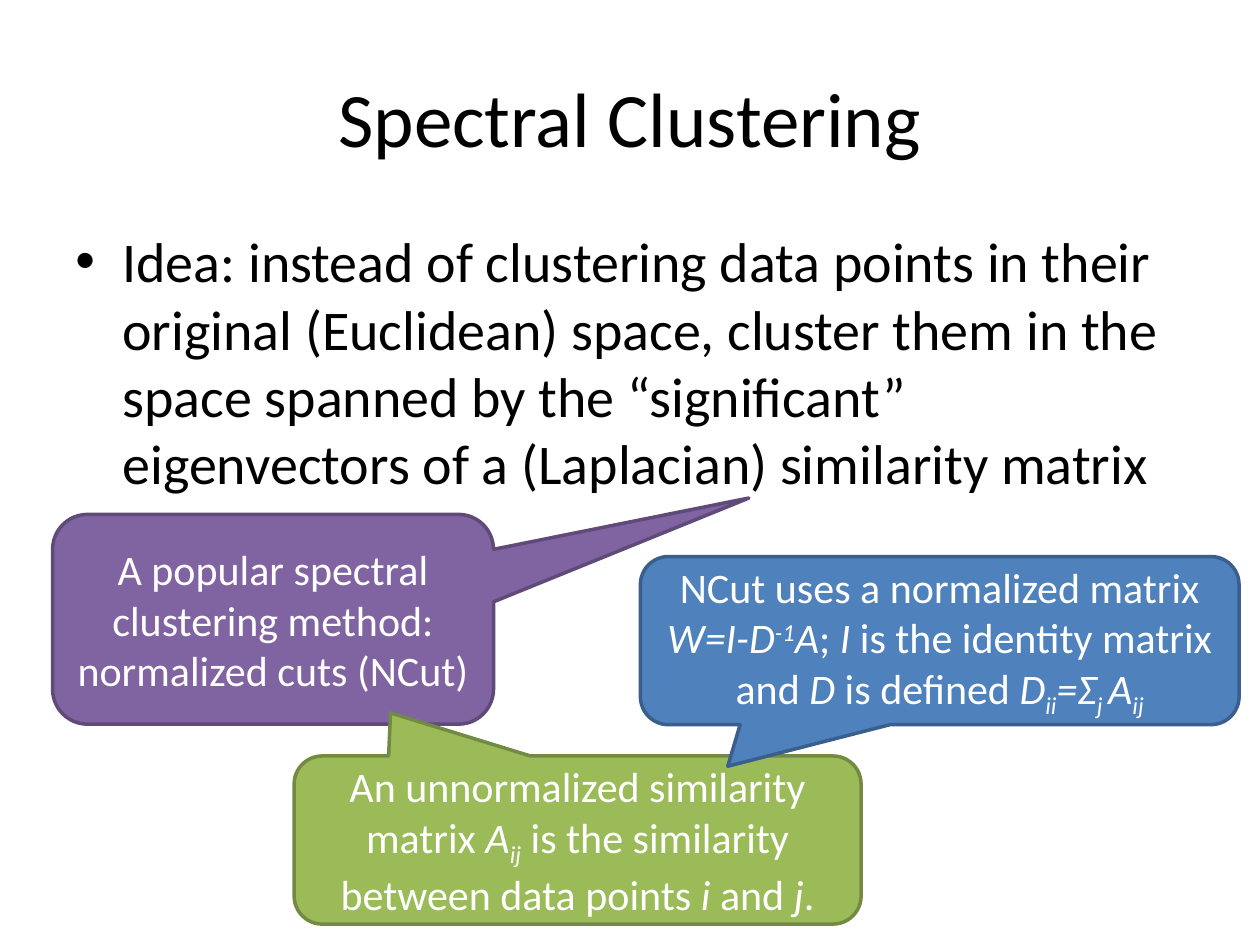
from lxml import etree
from pptx import Presentation
from pptx import util as u
from pptx.dml.color import RGBColor
from pptx.enum import shapes, text
from pptx.oxml import ns

BLACK = RGBColor(0x00, 0x00, 0x00)
WHITE = RGBColor(0xFF, 0xFF, 0xFF)
PURPLE = RGBColor(0x80, 0x64, 0xA2)
PURPLE_EDGE = RGBColor(0x5F, 0x4A, 0x78)
GREEN = RGBColor(0x9B, 0xBB, 0x59)
GREEN_EDGE = RGBColor(0x73, 0x8A, 0x42)
BLUE = RGBColor(0x4F, 0x81, 0xBD)
BLUE_EDGE = RGBColor(0x3A, 0x5F, 0x8C)

SUBSCRIPT = -25
SUPERSCRIPT = 30


def plain(content):
    return content, False, 0


def math(content, baseline=0):
    return content, True, baseline


class SlideBuilder:
    font_name = "Calibri"
    title_size = 44
    body_size = 32
    callout_size = 24
    corner = 0.167

    def __init__(self, slide):
        self.slide = slide

    def style(self, paragraph, size, color, alignment):
        paragraph.alignment = alignment
        paragraph.font.name = self.font_name
        paragraph.font.size = u.Pt(size)
        paragraph.font.color.rgb = color

    def text_box(self, box):
        frame = self.slide.shapes.add_textbox(*map(u.Cm, box)).text_frame
        frame.word_wrap = True
        return frame

    def title(self, content, box):
        frame = self.text_box(box)
        frame.vertical_anchor = text.MSO_ANCHOR.MIDDLE
        paragraph = frame.paragraphs[0]
        paragraph.text = content
        self.style(paragraph, self.title_size, BLACK, text.PP_ALIGN.CENTER)

    def bullet(self, content, box):
        paragraph = self.text_box(box).paragraphs[0]
        paragraph.text = content
        paragraph.space_before = u.Pt(0.2 * self.body_size)
        properties = paragraph._p.get_or_add_pPr()
        indent = u.Cm(0.95)
        properties.set("marL", str(indent))
        properties.set("indent", str(-indent))
        etree.SubElement(properties, ns.qn("a:buFont"), typeface="Arial")
        etree.SubElement(properties, ns.qn("a:buChar"), char="•")
        self.style(paragraph, self.body_size, BLACK, text.PP_ALIGN.LEFT)

    def callout(self, runs, box, tip, fill, edge):
        shape = self.slide.shapes.add_shape(
            shapes.MSO_SHAPE.ROUNDED_RECTANGULAR_CALLOUT, *map(u.Cm, box))
        for index, value in enumerate((*tip, self.corner)):
            shape.adjustments[index] = value
        shape.shadow.inherit = False
        shape.fill.solid()
        shape.fill.fore_color.rgb = fill
        shape.line.color.rgb = edge
        shape.line.width = u.Pt(2)
        frame = shape.text_frame
        frame.word_wrap = True
        frame.vertical_anchor = text.MSO_ANCHOR.MIDDLE
        paragraph = frame.paragraphs[0]
        self.style(paragraph, self.callout_size, WHITE, text.PP_ALIGN.CENTER)
        for content, italic, baseline in runs:
            run = paragraph.add_run()
            run.text = content
            if italic:
                run.font.italic = True
            if baseline:
                run._r.get_or_add_rPr().set("baseline", str(baseline * 1000))


def main():
    presentation = Presentation()
    presentation.slide_width = u.Cm(25.4)
    presentation.slide_height = u.Cm(19.05)
    builder = SlideBuilder(presentation.slides.add_slide(presentation.slide_layouts[6]))

    builder.title("Spectral Clustering", (1.27, 0.76, 22.86, 3.18))
    builder.bullet(
        "Idea: instead of clustering data points in their original (Euclidean) space, "
        "cluster them in the space spanned by the “significant” eigenvectors of a "
        "(Laplacian) similarity matrix",
        (1.27, 4.45, 22.86, 6.35))

    builder.callout(
        [plain("A popular spectral clustering method: normalized cuts (NCut)")],
        (1.06, 10.37, 8.89, 4.23), (1.079, -0.578), PURPLE, PURPLE_EDGE)
    builder.callout(
        [plain("An unnormalized similarity matrix "), math("A"), math("ij", SUBSCRIPT),
         plain(" is the similarity between data points "), math("i"),
         plain(" and "), math("j"), plain(".")],
        (5.93, 15.24, 11.43, 3.39), (-0.33, -0.756), GREEN, GREEN_EDGE)
    builder.callout(
        [plain("NCut uses a normalized matrix "), math("W=I-D"), math("-1", SUPERSCRIPT),
         math("A"), plain("; "), math("I"), plain(" is the identity matrix and "),
         math("D"), plain(" is defined "), math("D"), math("ii", SUBSCRIPT),
         math("=Σ"), math("j ", SUBSCRIPT), math("A"), math("ij", SUBSCRIPT)],
        (12.91, 11.22, 12.07, 3.39), (-0.354, 0.747), BLUE, BLUE_EDGE)

    presentation.save("out.pptx")


if __name__ == "__main__":
    main()
